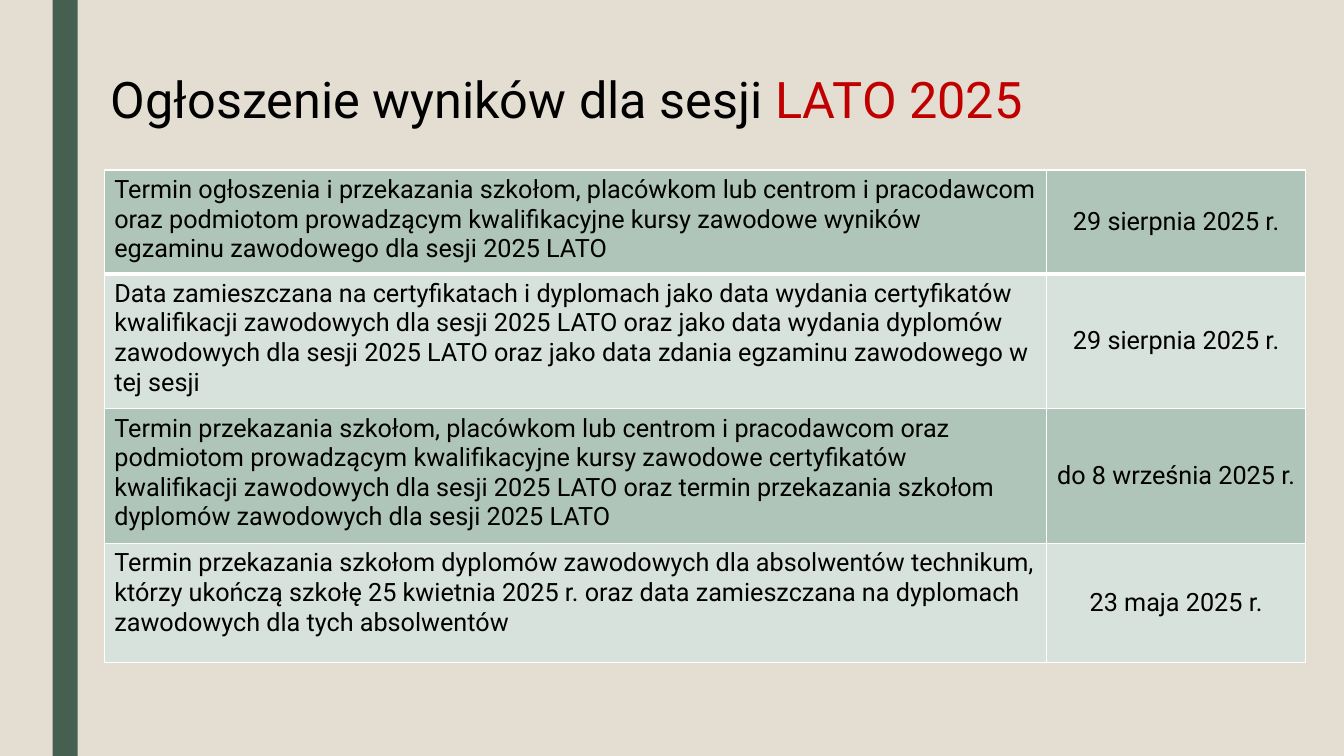
from dataclasses import dataclass

from lxml import etree
from pptx import Presentation
from pptx.dml.color import RGBColor
from pptx.enum.shapes import MSO_SHAPE
from pptx.enum.text import MSO_ANCHOR, PP_ALIGN
from pptx.oxml.ns import qn
from pptx.util import Pt

RECTANGLE = MSO_SHAPE.RECTANGLE
TOP, MIDDLE = MSO_ANCHOR.TOP, MSO_ANCHOR.MIDDLE
LEFT, CENTER = PP_ALIGN.LEFT, PP_ALIGN.CENTER


@dataclass(frozen=True)
class Theme:
    font: str = "Roboto"
    title_size: int = 36
    body_size: int = 18
    background: str = "E3DED1"
    stripe: str = "455F51"
    text: str = "000000"
    accent: str = "C00000"
    row_fills: tuple = ("AFC5B9", "D7E2DC")
    border: str = "FFFFFF"


theme = Theme()


def add_run(paragraph, text, size, color):
    run = paragraph.add_run()
    run.text = text
    run.font.name = theme.font
    run.font.size = Pt(size)
    run.font.color.rgb = RGBColor.from_string(color)


def add_border(cell, side, width):
    """Draw one cell edge; side is L, R, T or B, in that order."""
    line = etree.SubElement(cell._tc.get_or_add_tcPr(), qn(f"a:ln{side}"), w=str(Pt(width)))
    fill = etree.SubElement(line, qn("a:solidFill"))
    etree.SubElement(fill, qn("a:srgbClr"), val=theme.border)


prs = Presentation()
prs.slide_width, prs.slide_height = Pt(960), Pt(540)
slide = prs.slides.add_slide(prs.slide_layouts[6])
slide.background.fill.solid()
slide.background.fill.fore_color.rgb = RGBColor.from_string(theme.background)

stripe = slide.shapes.add_shape(RECTANGLE, Pt(37.5), Pt(0), Pt(18), Pt(540))
stripe.shadow.inherit = False
stripe.fill.solid()
stripe.fill.fore_color.rgb = RGBColor.from_string(theme.stripe)
stripe.line.fill.background()

title = slide.shapes.add_textbox(Pt(79.2), Pt(41), Pt(792), Pt(63.4)).text_frame
title.word_wrap = True
title.vertical_anchor = MIDDLE
title.margin_left = title.margin_top = title.margin_right = title.margin_bottom = Pt(0)
heading = title.paragraphs[0]
heading.line_spacing = 0.9
add_run(heading, "Ogłoszenie wyników dla sesji ", theme.title_size, theme.text)
add_run(heading, "LATO 2025", theme.title_size, theme.accent)

# Row height, event, date
deadlines = [
    (74.2,
     "Termin ogłoszenia i przekazania szkołom, placówkom lub centrom i pracodawcom "
     "oraz podmiotom prowadzącym kwalifikacyjne kursy zawodowe wyników "
     "egzaminu zawodowego dla sesji 2025 LATO",
     "29 sierpnia 2025 r."),
    (96.3,
     "Data zamieszczana na certyfikatach i dyplomach jako data wydania certyfikatów "
     "kwalifikacji zawodowych dla sesji 2025 LATO oraz jako data wydania dyplomów "
     "zawodowych dla sesji 2025 LATO oraz jako data zdania egzaminu zawodowego w "
     "tej sesji",
     "29 sierpnia 2025 r."),
    (96.3,
     "Termin przekazania szkołom, placówkom lub centrom i pracodawcom oraz "
     "podmiotom prowadzącym kwalifikacyjne kursy zawodowe certyfikatów "
     "kwalifikacji zawodowych dla sesji 2025 LATO oraz termin przekazania szkołom "
     "dyplomów zawodowych dla sesji 2025 LATO",
     "do 8 września 2025 r."),
    (84.8,
     "Termin przekazania szkołom dyplomów zawodowych dla absolwentów technikum, "
     "którzy ukończą szkołę 25 kwietnia 2025 r. oraz data zamieszczana na dyplomach "
     "zawodowych dla tych absolwentów",
     "23 maja 2025 r."),
]
column_widths = (673, 185.3)
total_height = sum(height for height, _, _ in deadlines)

schedule = slide.shapes.add_table(
    len(deadlines), len(column_widths), Pt(74.5), Pt(121.5),
    Pt(sum(column_widths)), Pt(total_height)).table
schedule.first_row = False
schedule.horz_banding = False
for column, width in zip(schedule.columns, column_widths):
    column.width = Pt(width)

for row, (height, event, date) in enumerate(deadlines):
    schedule.rows[row].height = Pt(height)
    cell_contents = ((event, LEFT, TOP), (date, CENTER, MIDDLE))
    for column, (text, alignment, anchor) in enumerate(cell_contents):
        cell = schedule.cell(row, column)
        cell.vertical_anchor = anchor
        # A thick rule separates the first row from the rest
        border_widths = {"L": 1, "R": 1, "T": 3 if row == 1 else 1, "B": 3 if row == 0 else 1}
        for side, width in border_widths.items():
            add_border(cell, side, width)
        cell.fill.solid()
        cell.fill.fore_color.rgb = RGBColor.from_string(theme.row_fills[row % 2])
        paragraph = cell.text_frame.paragraphs[0]
        paragraph.alignment = alignment
        add_run(paragraph, text, theme.body_size, theme.text)

prs.save("out.pptx")
